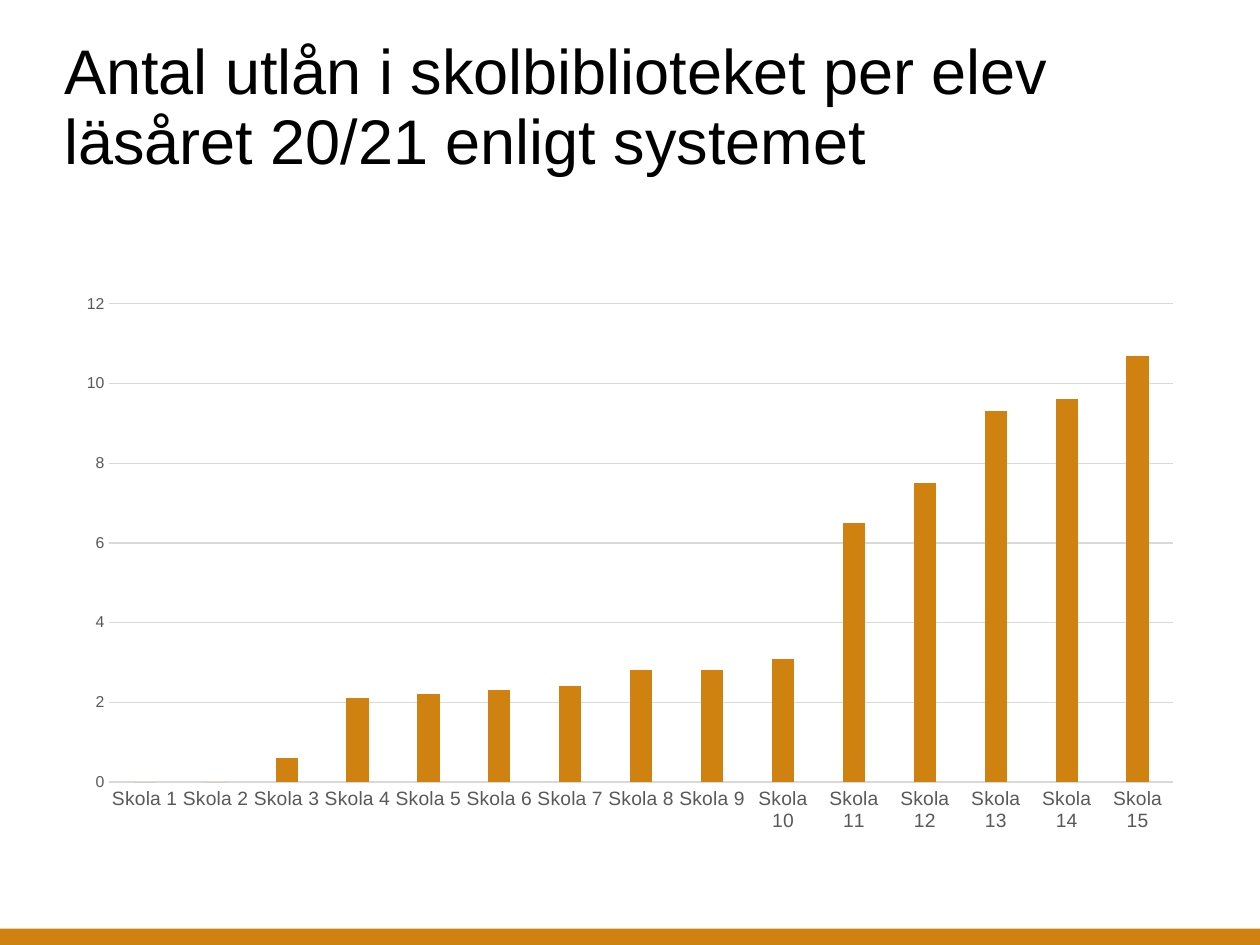
from dataclasses import dataclass

from pptx import Presentation
from pptx.chart.data import CategoryChartData
from pptx.dml.color import RGBColor
from pptx.enum.chart import XL_CHART_TYPE, XL_TICK_MARK
from pptx.enum.shapes import MSO_SHAPE
from pptx.enum.text import MSO_ANCHOR
from pptx.util import Inches, Pt

COLUMNS = XL_CHART_TYPE.COLUMN_CLUSTERED
RECTANGLE = MSO_SHAPE.RECTANGLE
NO_TICK = XL_TICK_MARK.NONE
BOTTOM = MSO_ANCHOR.BOTTOM

WIDTH, HEIGHT = 10, 7.5
MARGIN = 0.51
FONT = "Arial"
ORANGE, BLACK, GREY, LIGHT_GREY = "CF820F", "000000", "595959", "D9D9D9"

TITLE = "Antal utlån i skolbiblioteket per elev läsåret 20/21 enligt systemet"
LOANS_PER_PUPIL = [0, 0, 0.6, 2.1, 2.2, 2.3, 2.4, 2.8, 2.8, 3.1, 6.5, 7.5, 9.3, 9.6, 10.7]


@dataclass
class Box:
    left: float
    top: float
    width: float
    height: float

    def lengths(self) -> list:
        return [Inches(n) for n in (self.left, self.top, self.width, self.height)]


def color(hex_value: str) -> RGBColor:
    return RGBColor.from_string(hex_value)


def set_values(target, values: dict) -> None:
    for name, value in values.items():
        setattr(target, name, value)


def style_font(font, size: float, hex_value: str) -> None:
    set_values(font, {"name": FONT, "size": Pt(size)})
    font.color.rgb = color(hex_value)


def style_line(line) -> None:
    line.color.rgb = color(LIGHT_GREY)
    line.width = Pt(0.75)


def style_axis(axis, size: float) -> None:
    set_values(axis, {"major_tick_mark": NO_TICK, "minor_tick_mark": NO_TICK})
    style_font(axis.tick_labels.font, size, GREY)


def add_band(slide, box: Box) -> None:
    band = slide.shapes.add_shape(RECTANGLE, *box.lengths())
    band.shadow.inherit = False
    band.fill.solid()
    band.fill.fore_color.rgb = color(ORANGE)
    band.line.fill.background()


def add_title(slide, box: Box) -> None:
    frame = slide.shapes.add_textbox(*box.lengths()).text_frame
    set_values(frame, {"word_wrap": True, "vertical_anchor": BOTTOM,
                       "margin_left": 0, "margin_top": 0,
                       "margin_right": 0, "margin_bottom": 0})
    paragraph = frame.paragraphs[0]
    paragraph.line_spacing = Pt(40)
    run = paragraph.add_run()
    run.text = TITLE
    style_font(run.font, 36, BLACK)


def add_loans_chart(slide, box: Box) -> None:
    data = CategoryChartData()
    data.categories = [f"Skola {n}" for n in range(1, len(LOANS_PER_PUPIL) + 1)]
    data.add_series("Series 1", LOANS_PER_PUPIL)
    chart = slide.shapes.add_chart(COLUMNS, *box.lengths(), data).chart
    set_values(chart, {"has_legend": False, "has_title": False})
    style_font(chart.font, 10, BLACK)

    # Columns
    plot = chart.plots[0]
    set_values(plot, {"gap_width": 219, "overlap": -27, "vary_by_categories": False})
    fill = plot.series[0].format.fill
    fill.solid()
    fill.fore_color.rgb = color(ORANGE)

    # Axes
    style_axis(chart.category_axis, 11)
    style_line(chart.category_axis.format.line)
    value_axis = chart.value_axis
    style_axis(value_axis, 9)
    set_values(value_axis, {"minimum_scale": 0, "maximum_scale": 12, "major_unit": 2})
    value_axis.format.line.fill.background()
    style_line(value_axis.major_gridlines.format.line)


def main() -> None:
    presentation = Presentation()
    set_values(presentation, {"slide_width": Inches(WIDTH), "slide_height": Inches(HEIGHT)})
    slide = presentation.slides.add_slide(presentation.slide_layouts[6])
    content_width = WIDTH - 2 * MARGIN

    add_band(slide, Box(0, 7.37, WIDTH, HEIGHT - 7.37))
    add_title(slide, Box(MARGIN, 0.31, content_width, 1.1))
    add_loans_chart(slide, Box(MARGIN, 2.25, content_width, 4.44))
    presentation.save("out.pptx")


if __name__ == "__main__":
    main()
